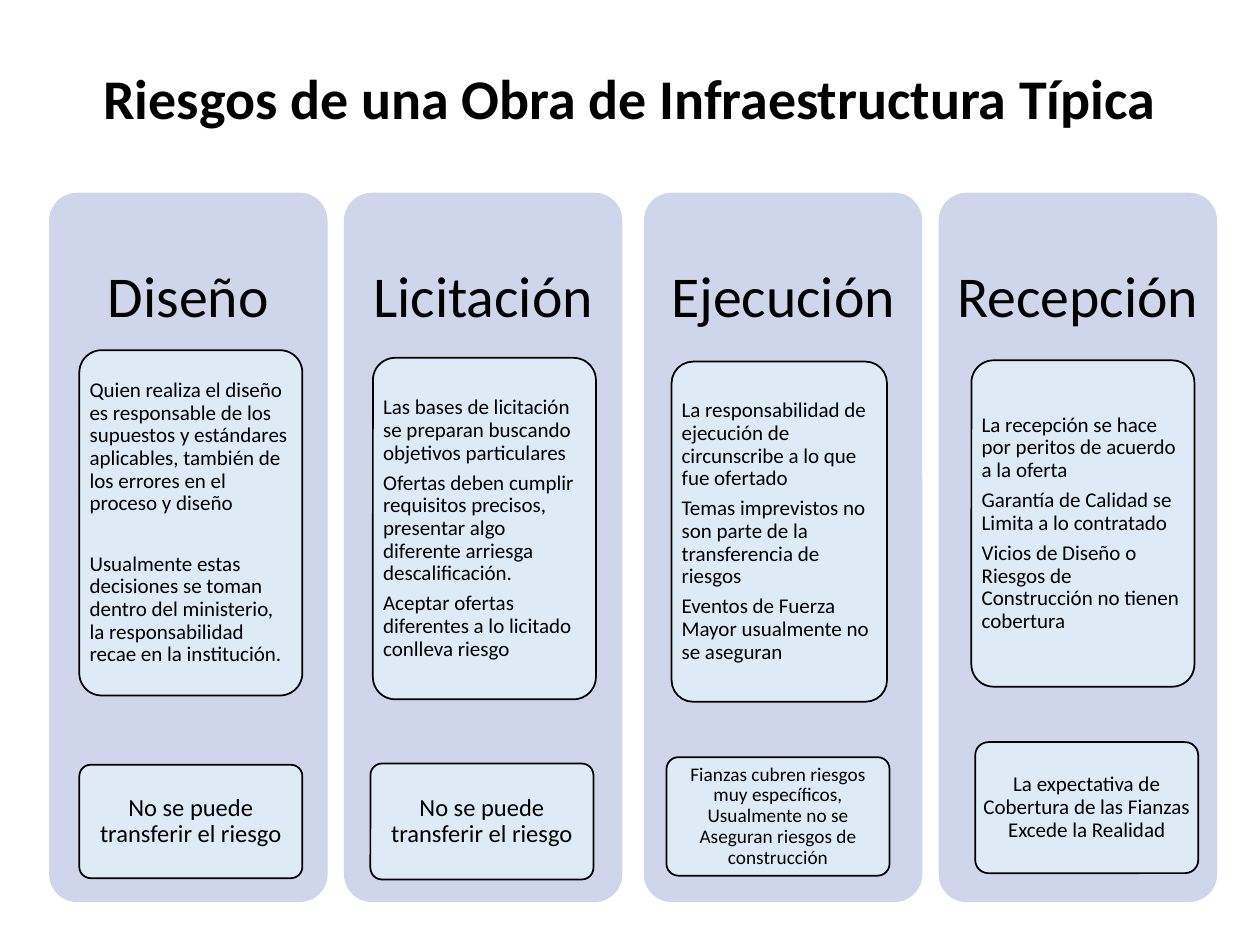
from dataclasses import dataclass

from pptx import Presentation
from pptx.dml.color import RGBColor
from pptx.enum.shapes import MSO_SHAPE as Shape
from pptx.enum.text import MSO_ANCHOR as Anchor, PP_ALIGN as Align
from pptx.util import Inches, Pt

FONT = "Calibri"
BLACK, COLUMN_FILL, CARD_FILL = "000000", "CFD5EA", "DEEBF7"
COLUMN_TOP, COLUMN_WIDTH, COLUMN_HEIGHT, HEADING_HEIGHT = 1.53, 2.21, 5.63, 1.69
NO_TRANSFER = "No se puede transferir el riesgo"


@dataclass
class Stage:
    """One project stage: its heading, risk card and coverage card."""
    name: str
    left: float
    risk_box: tuple
    risks: list
    coverage_box: tuple
    coverage: str
    coverage_size: int
    risk_gap: float = 0


STAGES = [
    Stage("Diseño", 0.39, (0.63, 2.78, 1.77, 2.74),
          ["Quien realiza el diseño es responsable de los supuestos y estándares "
           "aplicables, también de los errores en el proceso y diseño",
           "Usualmente estas decisiones se toman dentro del ministerio, "
           "la responsabilidad recae en la institución."],
          (0.63, 6.07, 1.77, 0.9), NO_TRANSFER, 14, risk_gap=17.4),
    Stage("Licitación", 2.73, (2.96, 2.84, 1.77, 2.71),
          ["Las bases de licitación se preparan buscando objetivos particulares",
           "Ofertas deben cumplir requisitos precisos, presentar algo diferente "
           "arriesga descalificación.",
           "Aceptar ofertas diferentes a lo licitado conlleva riesgo"],
          (2.94, 6.06, 1.77, 0.92), NO_TRANSFER, 14),
    Stage("Ejecución", 5.11, (5.33, 2.87, 1.71, 2.7),
          ["La responsabilidad de ejecución de circunscribe a lo que fue ofertado",
           "Temas imprevistos no son parte de la transferencia de riesgos",
           "Eventos de Fuerza Mayor usualmente no se aseguran"],
          (5.29, 6.01, 1.77, 0.94),
          "Fianzas cubren riesgos muy específicos, Usualmente no se Aseguran "
          "riesgos de construcción", 11),
    Stage("Recepción", 7.45, (7.71, 2.86, 1.77, 2.59),
          ["La recepción se hace por peritos de acuerdo a la oferta",
           "Garantía de Calidad se Limita a lo contratado",
           "Vicios de Diseño o Riesgos de Construcción no tienen cobertura"],
          (7.74, 5.89, 1.77, 1.04),
          "La expectativa de Cobertura de las Fianzas Excede la Realidad", 12),
]


def color(value):
    """Turn a hex string into a colour."""
    return RGBColor.from_string(value)


def inches(box):
    """Convert left, top, width and height to lengths."""
    return [Inches(value) for value in box]


def write_text(shape, lines, size, align=Align.CENTER, margin=0.03, gap=0, bold=False):
    """Fill a shape with formatted, vertically centred paragraphs."""
    frame = shape.text_frame
    frame.text = "\n".join(lines)
    frame.word_wrap = True
    frame.vertical_anchor = Anchor.MIDDLE
    frame.margin_left = frame.margin_right = Inches(margin)
    frame.margin_top = frame.margin_bottom = Inches(margin)
    for index, paragraph in enumerate(frame.paragraphs):
        paragraph.alignment = align
        paragraph.line_spacing = 0.9
        paragraph.space_before = Pt(gap if index else 0)
        paragraph.space_after = Pt(round(size * 0.35, 1))
        for run in paragraph.runs:
            run.font.name = FONT
            run.font.size = Pt(size)
            run.font.bold = bold
            run.font.color.rgb = color(BLACK)


def add_title(slide, text):
    """Place the slide title in its placeholder."""
    title = slide.shapes.title
    title.left, title.top, title.width, title.height = inches((0.69, 0.08, 8.62, 1.45))
    write_text(title, [text], 32, margin=0.05, bold=True)
    title.text_frame.paragraphs[0].space_after = Pt(0)


def add_panel(slide, box, fill, outlined=False):
    """Add a rounded panel, with or without an outline."""
    panel = slide.shapes.add_shape(Shape.ROUNDED_RECTANGLE, *inches(box))
    panel.adjustments[0] = 0.1
    panel.shadow.inherit = False
    panel.fill.solid()
    panel.fill.fore_color.rgb = color(fill)
    if outlined:
        panel.line.color.rgb = color(BLACK)
        panel.line.width = Pt(1)
    else:
        panel.line.fill.background()
    return panel


def add_stage(slide, stage):
    """Add a stage column with its heading and two cards."""
    add_panel(slide, (stage.left, COLUMN_TOP, COLUMN_WIDTH, COLUMN_HEIGHT), COLUMN_FILL)
    heading = slide.shapes.add_textbox(
        *inches((stage.left, COLUMN_TOP, COLUMN_WIDTH, HEADING_HEIGHT)))
    write_text(heading, [stage.name], 33, margin=0.14)
    risk_card = add_panel(slide, stage.risk_box, CARD_FILL, outlined=True)
    write_text(risk_card, stage.risks, 12, Align.LEFT, gap=stage.risk_gap)
    coverage_card = add_panel(slide, stage.coverage_box, CARD_FILL, outlined=True)
    write_text(coverage_card, [stage.coverage], stage.coverage_size)


def main():
    """Build and save the presentation."""
    presentation = Presentation()
    presentation.slide_width, presentation.slide_height = Inches(10), Inches(7.5)
    slide = presentation.slides.add_slide(presentation.slide_layouts[5])
    add_title(slide, "Riesgos de una Obra de Infraestructura Típica")
    for stage in STAGES:
        add_stage(slide, stage)
    presentation.save("out.pptx")


if __name__ == "__main__":
    main()
